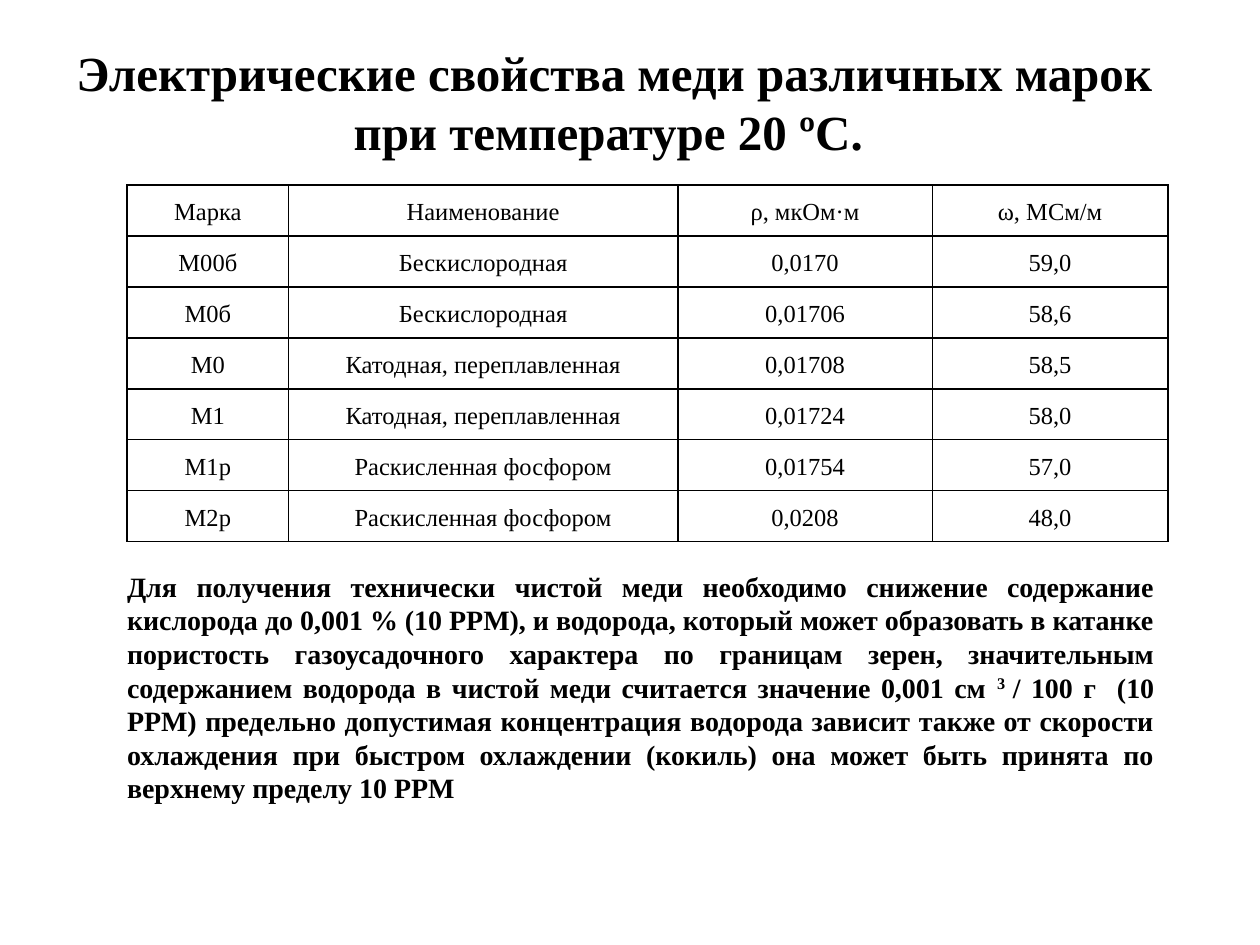
import pptx
import pptx.util
import pptx.dml.color
import pptx.enum.text
import pptx.oxml
import pptx.oxml.ns

Inches = pptx.util.Inches
Pt = pptx.util.Pt
ALIGN = pptx.enum.text.PP_ALIGN
ANCHOR = pptx.enum.text.MSO_ANCHOR

FONT = "Times New Roman"
BLACK = "000000"
WHITE = "FFFFFF"

TITLE = "Электрические свойства меди различных марок при температуре 20 ºС. "
COPPER_GRADES = [
    ("Марка", "Наименование", "ρ, мкОм·м", "ω, МСм/м"),
    ("М00б", "Бескислородная", "0,0170", "59,0"),
    ("М0б", "Бескислородная", "0,01706", "58,6"),
    ("М0", "Катодная, переплавленная", "0,01708", "58,5"),
    ("М1", "Катодная, переплавленная", "0,01724", "58,0"),
    ("М1р", "Раскисленная фосфором", "0,01754", "57,0"),
    ("М2р", "Раскисленная фосфором", "0,0208", "48,0"),
]
COLUMN_WIDTHS = [1.28, 3.09, 2.02, 1.87]
TABLE_HEIGHT = 2.83
PURITY_NOTE = [
    ("Для получения технически чистой меди необходимо снижение содержание "
     "кислорода до 0,001 % (10 PPM), и водорода, который может образовать в катанке "
     "пористость газоусадочного характера по границам зерен, значительным "
     "содержанием водорода в чистой меди считается значение 0,001 см ", False),
    ("3 ", True),
    ("/ 100 г  (10 PPM) предельно допустимая концентрация водорода зависит также "
     "от скорости охлаждения при быстром охлаждении (кокиль) она может быть принята "
     "по верхнему пределу 10 PPM ", False),
]


def color(value):
    return pptx.dml.color.RGBColor.from_string(value)


def style(run, size, bold=False):
    run.font.name = FONT
    run.font.size = Pt(size)
    run.font.bold = bold
    run.font.color.rgb = color(BLACK)


def add_text(slide, left, top, width, height, pieces, size, align, anchor):
    frame = slide.shapes.add_textbox(
        Inches(left), Inches(top), Inches(width), Inches(height)).text_frame
    frame.word_wrap = True
    frame.vertical_anchor = anchor
    paragraph = frame.paragraphs[0]
    paragraph.alignment = align
    for text, raised in pieces:
        run = paragraph.add_run()
        run.text = text
        style(run, size, bold=True)
        if raised:
            run.font._element.set("baseline", "30000")
    return frame


def add_borders(cell):
    properties = cell._tc.get_or_add_tcPr()
    for position, side in enumerate(("lnL", "lnR", "lnT", "lnB")):
        properties.insert(position, pptx.oxml.parse_xml(
            f'<a:{side} {pptx.oxml.ns.nsdecls("a")} w="{Pt(1)}"><a:solidFill>'
            f'<a:srgbClr val="{BLACK}"/></a:solidFill></a:{side}>'))


def fill_cell(cell, text):
    cell.fill.solid()
    cell.fill.fore_color.rgb = color(WHITE)
    cell.vertical_anchor = ANCHOR.MIDDLE
    cell.margin_left = cell.margin_right = Inches(0.07)
    cell.margin_top = cell.margin_bottom = 0
    paragraph = cell.text_frame.paragraphs[0]
    paragraph.text = text
    paragraph.alignment = ALIGN.CENTER
    paragraph.line_spacing = 1.15
    style(paragraph.runs[0], 14)
    add_borders(cell)


def add_grades(slide):
    grades = slide.shapes.add_table(
        len(COPPER_GRADES), len(COLUMN_WIDTHS), Inches(1.01), Inches(1.47),
        Inches(sum(COLUMN_WIDTHS)), Inches(TABLE_HEIGHT)).table
    grades.first_row = grades.horz_banding = False
    for column, width in zip(grades.columns, COLUMN_WIDTHS):
        column.width = Inches(width)
    for row, texts in zip(grades.rows, COPPER_GRADES):
        for cell, text in zip(row.cells, texts):
            fill_cell(cell, text)


def main():
    deck = pptx.Presentation()
    deck.slide_width, deck.slide_height = Inches(10), Inches(7.5)
    slide = deck.slides.add_slide(deck.slide_layouts[6])
    add_text(slide, 0.5, 0.3, 8.75, 1.01, [(TITLE, False)], 28,
             ALIGN.CENTER, ANCHOR.MIDDLE)
    add_grades(slide)
    note = add_text(slide, 0.91, 4.47, 8.35, 1.99, PURITY_NOTE, 16,
                    ALIGN.JUSTIFY, ANCHOR.TOP)
    note.auto_size = pptx.enum.text.MSO_AUTO_SIZE.SHAPE_TO_FIT_TEXT
    deck.save("out.pptx")


if __name__ == "__main__":
    main()
